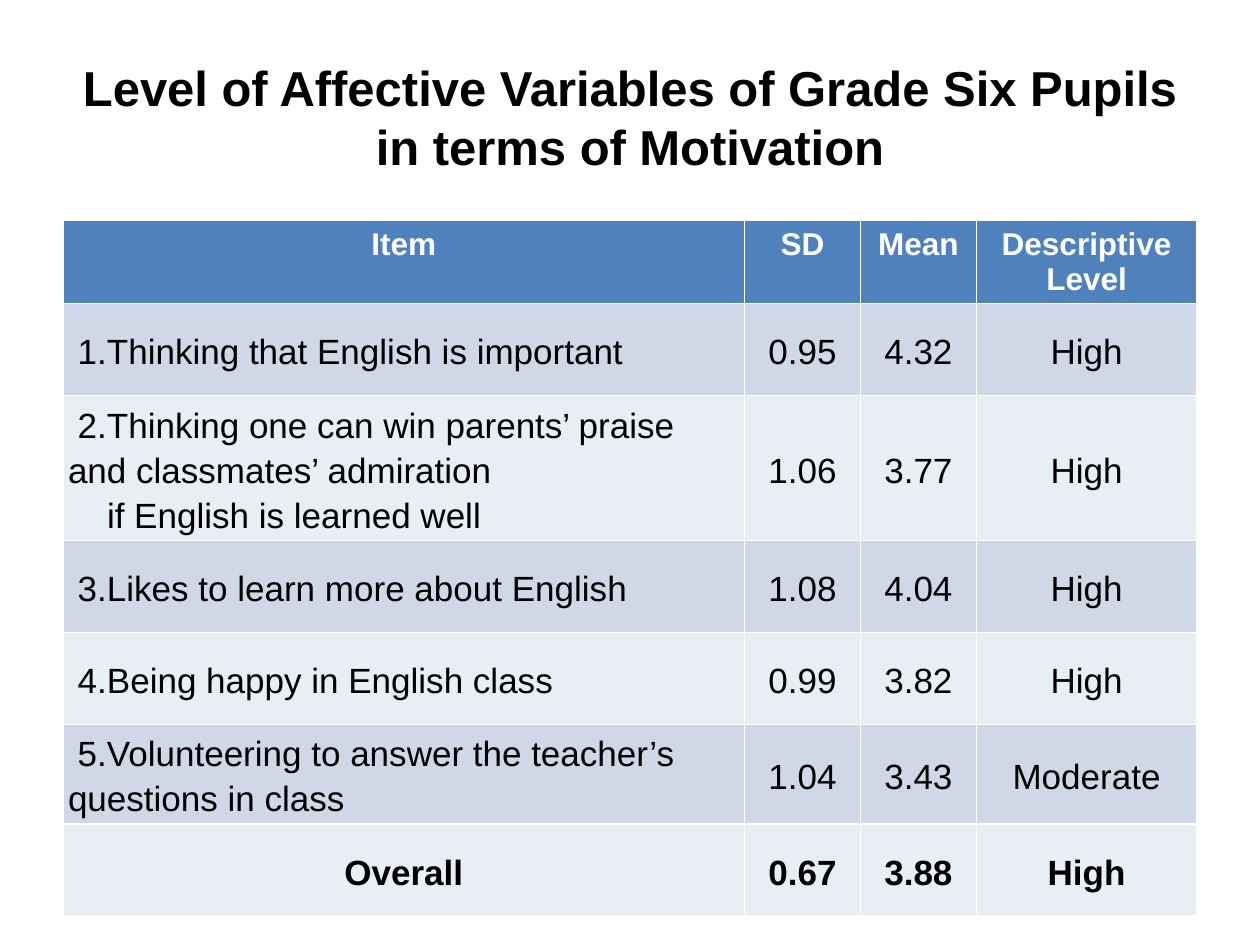
"""Build the slide on affective variables of pupils in terms of motivation."""
from pptx import Presentation
from pptx.dml.color import RGBColor
from pptx.enum.text import MSO_ANCHOR, PP_ALIGN
from pptx.util import Inches, Pt

CENTER, LEFT = PP_ALIGN.CENTER, PP_ALIGN.LEFT
TOP, MIDDLE = MSO_ANCHOR.TOP, MSO_ANCHOR.MIDDLE
FONT = "Arial"
BLACK, WHITE = "000000", "FFFFFF"
HEADER_FILL = "4F81BD"
BAND_FILLS = ("E9EDF4", "D0D8E8")

TITLE = "Level of Affective Variables of Grade Six Pupils in terms of Motivation"
RATINGS = [
    ("Item", "SD", "Mean", "Descriptive Level"),
    (" 1.Thinking that English is important", "0.95", "4.32", "High"),
    (" 2.Thinking one can win parents’ praise and classmates’ admiration\n"
     "if English is learned well", "1.06", "3.77", "High"),
    (" 3.Likes to learn more about English", "1.08", "4.04", "High"),
    (" 4.Being happy in English class", "0.99", "3.82", "High"),
    (" 5.Volunteering to answer the teacher’s questions in class", "1.04", "3.43", "Moderate"),
    ("Overall", "0.67", "3.88", "High"),
]
COLUMN_WIDTHS = (5.41, 0.92, 0.92, 1.75)
HEADER_HEIGHT, ROW_HEIGHT = 0.5, 0.73
CELL_MARGIN, CONTINUATION_INDENT = 0.04, 0.31


def rgb(value):
    return RGBColor.from_string(value)


def write(paragraph, text, size, color, bold, align):
    paragraph.alignment = align
    run = paragraph.add_run()
    run.text = text
    run.font.name = FONT
    run.font.size = Pt(size)
    run.font.bold = bold
    run.font.color.rgb = rgb(color)


def fill_cell(cell, text, row, column):
    header, overall = row == 0, row == len(RATINGS) - 1
    cell.fill.solid()
    cell.fill.fore_color.rgb = rgb(HEADER_FILL if header else BAND_FILLS[row % 2])
    cell.vertical_anchor = TOP if header else MIDDLE
    if not header:
        cell.margin_left = cell.margin_right = Inches(CELL_MARGIN)
        cell.margin_top = cell.margin_bottom = Inches(CELL_MARGIN)
    align = CENTER if header or overall or column else LEFT
    for index, line in enumerate(text.split("\n")):
        paragraph = cell.text_frame.add_paragraph() if index else cell.text_frame.paragraphs[0]
        write(paragraph, line, 18 if header else 20, WHITE if header else BLACK,
              header or overall, align)
        if not header:
            paragraph.line_spacing = 1.15
        if index:
            paragraph._p.get_or_add_pPr().set("marL", str(Inches(CONTINUATION_INDENT)))


def main():
    deck = Presentation()
    deck.slide_width, deck.slide_height = Inches(10), Inches(7.5)
    slide = deck.slides.add_slide(deck.slide_layouts[5])

    title = slide.shapes.title
    title.left, title.top, title.width, title.height = map(Inches, (0.5, 0.3, 9, 1.25))
    title.text_frame.vertical_anchor = MIDDLE
    write(title.text_frame.paragraphs[0], TITLE, 28, BLACK, True, CENTER)

    heights = [HEADER_HEIGHT] + [ROW_HEIGHT] * (len(RATINGS) - 1)
    table = slide.shapes.add_table(
        len(RATINGS), len(COLUMN_WIDTHS), Inches(0.5), Inches(1.75),
        Inches(sum(COLUMN_WIDTHS)), Inches(sum(heights))).table
    for column, width in zip(table.columns, COLUMN_WIDTHS):
        column.width = Inches(width)
    for row, (height, rating) in enumerate(zip(heights, RATINGS)):
        table.rows[row].height = Inches(height)
        for column, text in enumerate(rating):
            fill_cell(table.cell(row, column), text, row, column)

    deck.save("out.pptx")


if __name__ == "__main__":
    main()
